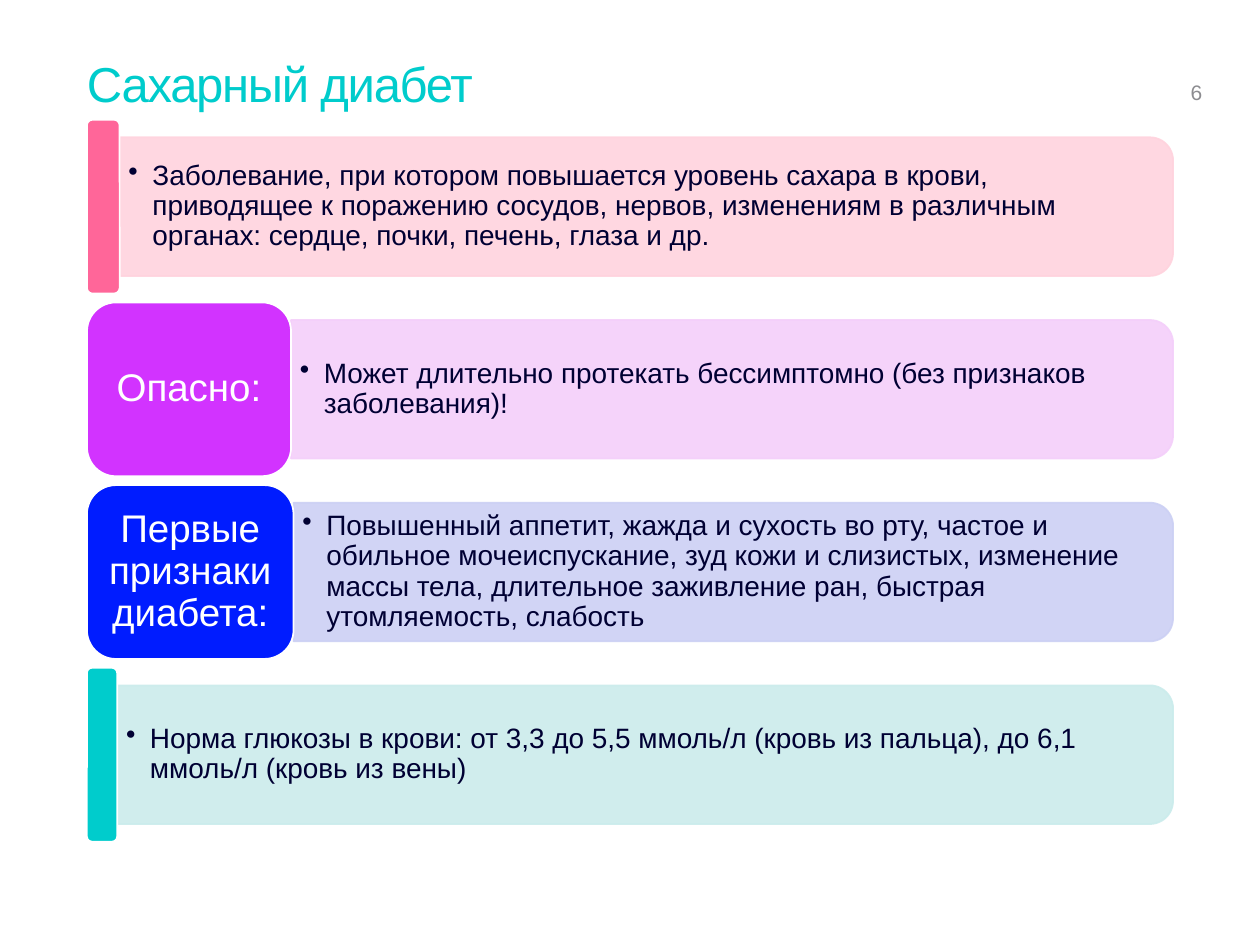
"""Builds a slide about diabetes with four labelled rows."""
from lxml import etree
from pptx import Presentation
from pptx.dml.color import RGBColor
from pptx.enum.shapes import MSO_SHAPE
from pptx.enum.text import MSO_ANCHOR, MSO_AUTO_SIZE, PP_ALIGN
from pptx.oxml.ns import qn
from pptx.util import Inches, Pt

ROUND = MSO_SHAPE.ROUNDED_RECTANGLE
ROUND_END = MSO_SHAPE.ROUND_2_SAME_RECTANGLE
TOP, MIDDLE, BOTTOM = MSO_ANCHOR.TOP, MSO_ANCHOR.MIDDLE, MSO_ANCHOR.BOTTOM
LEFT, CENTER = PP_ALIGN.LEFT, PP_ALIGN.CENTER
FIXED_SIZE = MSO_AUTO_SIZE.NONE

WHITE = RGBColor(0xFF, 0xFF, 0xFF)
NAVY = RGBColor(0x00, 0x00, 0x33)
GREY = RGBColor(0x8C, 0x8C, 0x90)
TEAL = RGBColor(0x00, 0xCC, 0xCC)
PALE_TEAL = RGBColor(0xCB, 0xEC, 0xEC)
PINK = RGBColor(0xFF, 0x66, 0x99)
PALE_PINK = RGBColor(0xFF, 0xD3, 0xDE)
VIOLET = RGBColor(0xD2, 0x33, 0xFF)
PALE_VIOLET = RGBColor(0xF4, 0xCF, 0xFA)
BLUE = RGBColor(0x00, 0x1C, 0xFF)
PALE_BLUE = RGBColor(0xCC, 0xD0, 0xF4)

ROWS_LEFT, ROWS_RIGHT, ROWS_TOP, ROW_PITCH = 0.69, 9.31, 0.95, 1.45
LABEL_HEIGHT, PANEL_HEIGHT, DETAIL_HEIGHT = 1.38, 1.1, 1.0
ROWS = [
    (0.26, "", PINK, PALE_PINK,
     "Заболевание, при котором повышается уровень сахара в крови, приводящее "
     "к поражению сосудов, нервов, изменениям в различным органах: сердце, "
     "почки, печень, глаза и др."),
    (1.62, "Опасно:", VIOLET, PALE_VIOLET,
     "Может длительно протекать бессимптомно (без признаков заболевания)!"),
    (1.64, "Первые признаки диабета:", BLUE, PALE_BLUE,
     "Повышенный аппетит, жажда и сухость во рту, частое и обильное "
     "мочеиспускание, зуд кожи и слизистых, изменение массы тела, длительное "
     "заживление ран, быстрая утомляемость, слабость"),
    (0.24, "", TEAL, PALE_TEAL,
     "Норма глюкозы в крови: от 3,3 до 5,5 ммоль/л (кровь из пальца), "
     "до 6,1 ммоль/л (кровь из вены)"),
]


class SlideBuilder:
    """Holds the text style and the current slide."""

    font = "Arial"

    def __init__(self, slide):
        self.slide = slide

    def set_text(self, frame, text, size, color, align=LEFT, anchor=MIDDLE,
                 insets=(0, 0.05), spacing=0.9, wrap=True):
        """Fill a text frame with one styled paragraph."""
        frame.text = text
        frame.auto_size = FIXED_SIZE
        frame.word_wrap = wrap
        frame.vertical_anchor = anchor
        frame.margin_left = frame.margin_right = Inches(insets[0])
        frame.margin_top = frame.margin_bottom = Inches(insets[1])
        paragraph = frame.paragraphs[0]
        paragraph.alignment = align
        paragraph.line_spacing = spacing
        paragraph.space_before = Pt(0)
        for run in paragraph.runs:
            run.font.name = self.font
            run.font.size = Pt(size)
            run.font.color.rgb = color
        return paragraph

    def title(self, text):
        """Place the slide title."""
        title = self.slide.shapes.title
        title.left, title.top = Inches(0.69), Inches(0.4)
        title.width, title.height = Inches(8.62), Inches(1.03)
        paragraph = self.set_text(title.text_frame, text, 28, TEAL, anchor=TOP, spacing=Pt(32))
        paragraph.runs[0].font._element.set("spc", "-70")

    def text_box(self, left, top, width, height):
        """Add an empty text box and return its frame."""
        return self.slide.shapes.add_textbox(
            Inches(left), Inches(top), Inches(width), Inches(height)).text_frame

    def page_number(self, text):
        """Place the page number."""
        self.set_text(self.text_box(9.45, 0.4, 0.38, 0.47), text, 12, GREY,
                      anchor=BOTTOM, insets=(0, 0.04), spacing=1.0, wrap=False)

    def box(self, kind, left, top, width, height, fill, line):
        """Add a filled and outlined shape."""
        shape = self.slide.shapes.add_shape(
            kind, Inches(left), Inches(top), Inches(width), Inches(height))
        shape.shadow.inherit = False
        shape.fill.solid()
        shape.fill.fore_color.rgb = fill
        shape.line.color.rgb = line
        shape.line.width = Pt(1)
        return shape

    def panel(self, left, middle, width, color):
        """Add a translucent panel with its right end rounded."""
        center = left + width / 2
        panel = self.box(ROUND_END, center - PANEL_HEIGHT / 2, middle - width / 2,
                         PANEL_HEIGHT, width, color, color)
        panel.rotation = 90
        for tint in panel._element.spPr.iter(qn("a:srgbClr")):
            etree.SubElement(tint, qn("a:alpha")).set("val", "90000")

    def detail(self, left, middle, width, text):
        """Add a bulleted description."""
        frame = self.text_box(left, middle - DETAIL_HEIGHT / 2, width, DETAIL_HEIGHT)
        paragraph = self.set_text(frame, text, 16, NAVY, insets=(0.07, 0.03))
        properties = paragraph._p.get_or_add_pPr()
        properties.set("marL", str(Inches(0.19)))
        properties.set("indent", str(-Inches(0.19)))
        etree.SubElement(properties, qn("a:buChar")).set("char", "•")

    def label(self, top, width, text, color):
        """Add the coloured label at the start of a row."""
        label = self.box(ROUND, ROWS_LEFT, top, width, LABEL_HEIGHT, color, WHITE)
        if text:
            self.set_text(label.text_frame, text, 22, WHITE, CENTER, insets=(0.09, 0.05))

    def row(self, top, label_width, label, color, pale, detail):
        """Add one row made of a panel, a description and a label."""
        left, middle = ROWS_LEFT + label_width, top + LABEL_HEIGHT / 2
        width = ROWS_RIGHT - left
        self.panel(left, middle, width, pale)
        self.detail(left, middle, width - 0.06, detail)
        self.label(top, label_width, label, color)


def main():
    """Build and save the slide."""
    presentation = Presentation()
    presentation.slide_width, presentation.slide_height = Inches(10), Inches(7.5)
    builder = SlideBuilder(presentation.slides.add_slide(presentation.slide_layouts[5]))
    builder.title("Сахарный диабет")
    builder.page_number("6")
    for index, row in enumerate(ROWS):
        builder.row(ROWS_TOP + index * ROW_PITCH, *row)
    presentation.save("out.pptx")


if __name__ == "__main__":
    main()
